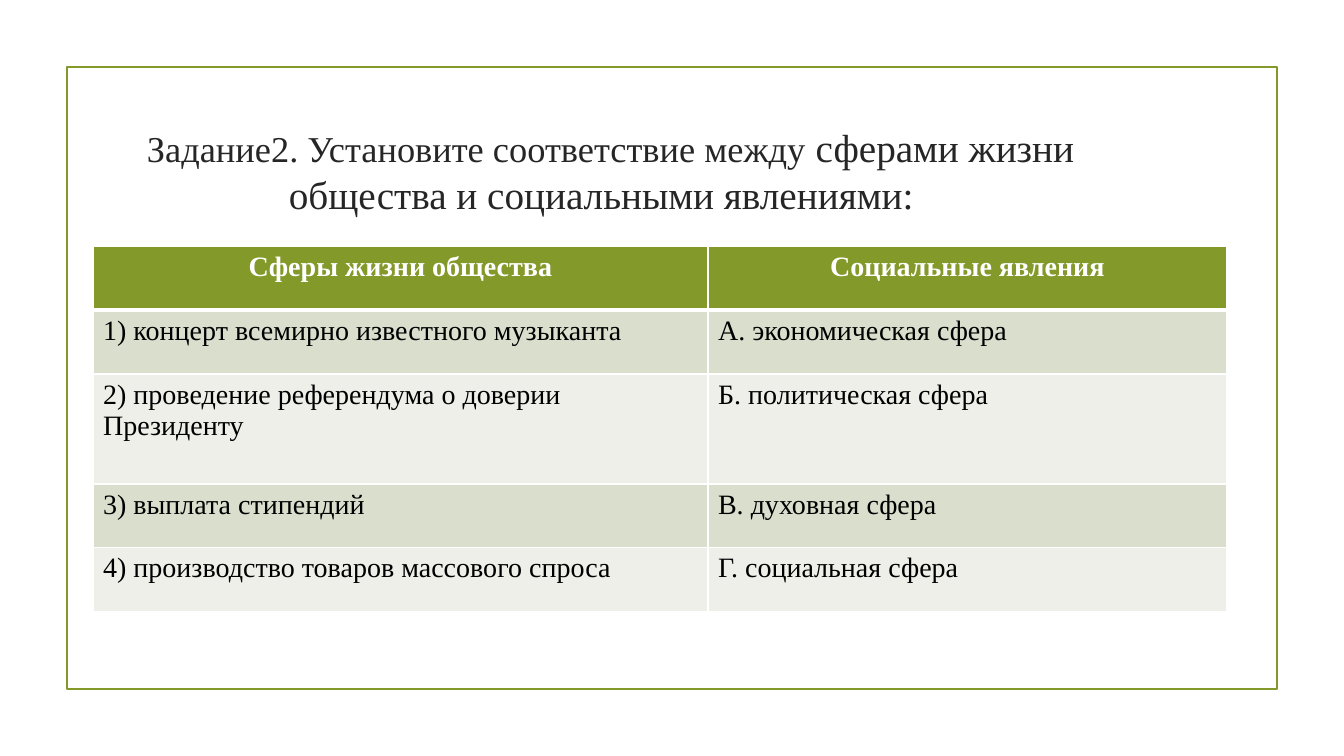
from lxml import etree
from pptx import Presentation
from pptx.dml.color import RGBColor
from pptx.enum.shapes import MSO_SHAPE
from pptx.enum.text import MSO_ANCHOR, MSO_AUTO_SIZE, PP_ALIGN
from pptx.oxml.ns import qn
from pptx.util import Pt

RECTANGLE = MSO_SHAPE.RECTANGLE
MIDDLE = MSO_ANCHOR.MIDDLE
NO_AUTOFIT = MSO_AUTO_SIZE.NONE
CENTER, LEFT = PP_ALIGN.CENTER, PP_ALIGN.LEFT
EMU_PER_PX = 914400 / 100.8
TITLE_ONLY = 5

COLORS = {
    "accent": "83992A",
    "title": "262626",
    "body": "000000",
    "white": "FFFFFF",
    "band_dark": "D9DECD",
    "band_light": "EDEFE8",
}

TITLE_RUNS = [
    (" Задание2. Установите соответствие между ", 26),
    ("сферами жизни общества и социальными явлениями: ", 28),
]
MATCHING_ROWS = [
    ("Сферы жизни общества", "Социальные явления"),
    ("1) концерт всемирно известного музыканта", "А. экономическая сфера"),
    ("2) проведение референдума о доверии Президенту", "Б. политическая сфера"),
    ("3) выплата стипендий", "В. духовная сфера"),
    ("4) производство товаров массового спроса", "Г. социальная сфера"),
]
COLUMN_WIDTHS = [615, 519]
ROW_HEIGHTS = [64, 64, 110, 64, 64]


def px(length):
    return round(length * EMU_PER_PX)


def rgb(name):
    return RGBColor.from_string(COLORS[name])


class SlideBuilder:
    """Draws styled elements on the current slide."""

    font_name = "Times New Roman"
    table_size = 20

    def __init__(self, slide):
        self.slide = slide

    def add_run(self, paragraph, text, size, color, bold=False):
        run = paragraph.add_run()
        run.text = text
        run.font.name = self.font_name
        run.font.size = Pt(size)
        run.font.bold = bold
        run.font.color.rgb = rgb(color)

    def frame(self, left, top, width, height):
        shape = self.slide.shapes.add_shape(
            RECTANGLE, px(left), px(top), px(width), px(height))
        shape.shadow.inherit = False
        shape.fill.background()
        shape.line.color.rgb = rgb("accent")
        shape.line.width = Pt(1.25)

    def title(self, left, top, width, height, runs):
        shape = self.slide.shapes.title
        shape.left, shape.top = px(left), px(top)
        shape.width, shape.height = px(width), px(height)
        text_frame = shape.text_frame
        text_frame.word_wrap = True
        text_frame.auto_size = NO_AUTOFIT
        text_frame.vertical_anchor = MIDDLE
        paragraph = text_frame.paragraphs[0]
        paragraph.alignment = CENTER
        for text, size in runs:
            self.add_run(paragraph, text, size, "title")

    def cell_borders(self, cell, widths):
        properties = cell._tc.get_or_add_tcPr()
        for side, width in widths.items():
            line = etree.SubElement(properties, qn(f"a:ln{side}"), w=str(Pt(width)))
            fill = etree.SubElement(line, qn("a:solidFill"))
            etree.SubElement(fill, qn("a:srgbClr"), val=COLORS["white"])

    def table(self, left, top, column_widths, row_heights, rows):
        table = self.slide.shapes.add_table(
            len(rows), len(column_widths), px(left), px(top),
            px(sum(column_widths)), px(sum(row_heights))).table
        for column, width in zip(table.columns, column_widths):
            column.width = px(width)
        for row, height in zip(table.rows, row_heights):
            row.height = px(height)
        for row_index, texts in enumerate(rows):
            header = row_index == 0
            band = "band_dark" if row_index % 2 else "band_light"
            borders = {"L": 1, "R": 1, "T": 3 if row_index == 1 else 1,
                       "B": 3 if header else 1}
            for column_index, text in enumerate(texts):
                cell = table.cell(row_index, column_index)
                self.cell_borders(cell, borders)
                cell.fill.solid()
                cell.fill.fore_color.rgb = rgb("accent" if header else band)
                paragraph = cell.text_frame.paragraphs[0]
                paragraph.alignment = CENTER if header else LEFT
                self.add_run(paragraph, text, self.table_size,
                             "white" if header else "body", header)


def main():
    presentation = Presentation()
    presentation.slide_width, presentation.slide_height = px(1344), px(756)
    layout = presentation.slide_layouts[TITLE_ONLY]
    builder = SlideBuilder(presentation.slides.add_slide(layout))
    builder.frame(67, 67, 1210, 622)
    builder.title(77, 121, 1058, 99, TITLE_RUNS)
    builder.table(93, 246, COLUMN_WIDTHS, ROW_HEIGHTS, MATCHING_ROWS)
    presentation.save("out.pptx")


if __name__ == "__main__":
    main()
